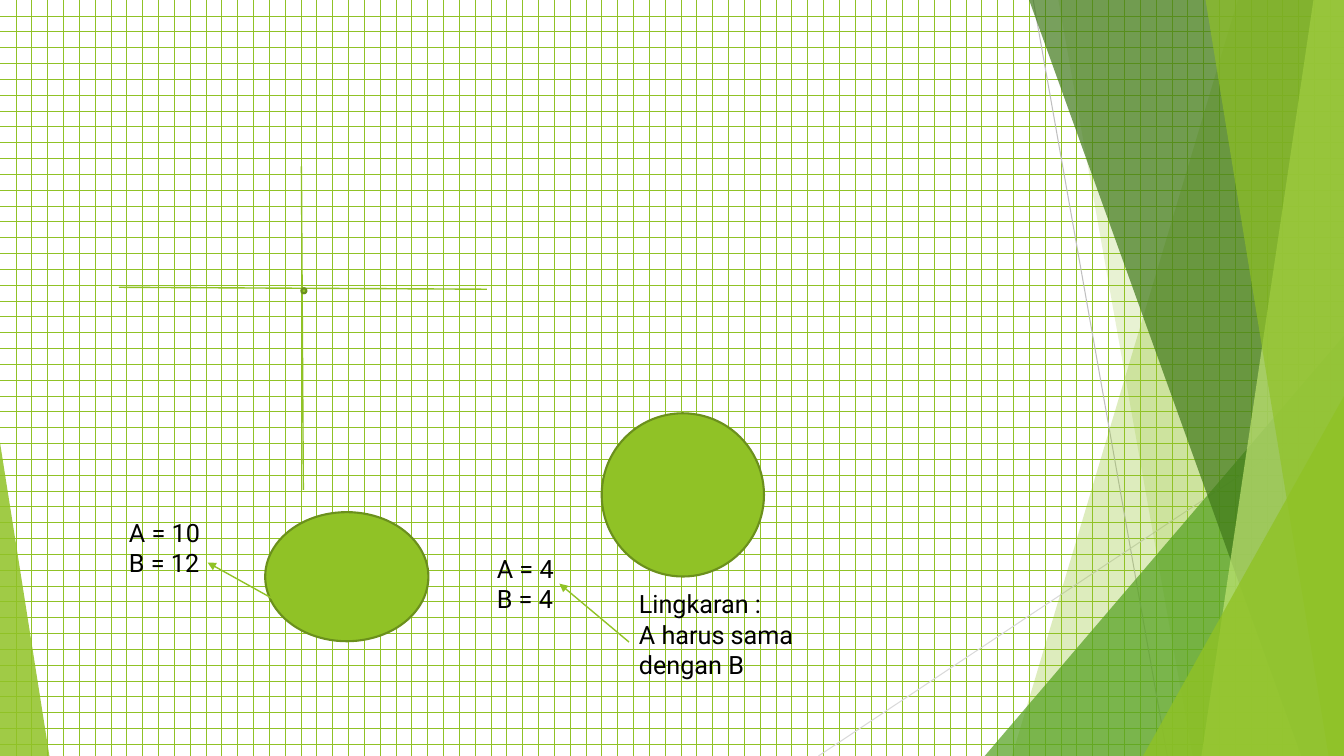
from dataclasses import dataclass

from lxml.etree import SubElement
from pptx import Presentation
from pptx.dml.color import RGBColor
from pptx.enum.dml import MSO_PATTERN
from pptx.enum.shapes import MSO_CONNECTOR, MSO_SHAPE
from pptx.enum.text import MSO_AUTO_SIZE
from pptx.oxml.ns import qn
from pptx.util import Pt

SLIDE_WIDTH, SLIDE_HEIGHT = 960, 540
COLOURS = {
    "lime": "90C226",
    "olive": "6B901C",
    "green": "54A021",
    "forest": "3F7819",
    "pale": "C0E474",
    "silver": "BFBFBF",
    "mist": "D9D9D9",
    "white": "FFFFFF",
    "black": "000000",
}
FRAME_FORMAT = {"word_wrap": True, "auto_size": MSO_AUTO_SIZE.SHAPE_TO_FIT_TEXT}
LABEL_FORMAT = {"name": "Roboto", "size": Pt(18)}


@dataclass
class Line:
    start: tuple[float, float]
    end: tuple[float, float]
    colour: str = "lime"
    width: float = 1
    arrow: bool = False


@dataclass
class Band:
    top_left: float
    bottom_left: float
    colour: str
    opacity: int


@dataclass
class Corner:
    box: tuple[float, float, float, float]
    apex: float
    colour: str
    opacity: int


@dataclass
class Round:
    box: tuple[float, float, float, float]
    preset: MSO_SHAPE = MSO_SHAPE.FLOWCHART_CONNECTOR


@dataclass
class Label:
    box: tuple[float, float, float, float]
    lines: tuple[str, ...]


FACETS = [
    Line((738, 0), (833.8, 540), "silver", 0.75),
    Line((960, 290.2), (584.6, 540), "mist", 0.75),
    Band(884.2, 722.9, "lime", 30),
    Band(756, 851.8, "lime", 20),
    Corner((703.4, 239.8, 256.6, 300.2), 1, "green", 72),
    Band(735.1, 929.5, "forest", 70),
    Band(938.2, 858.2, "pale", 70),
    Band(861.1, 949, "lime", 65),
    Corner((816.5, 283, 143.5, 257), 1, "lime", 80),
    Corner((0, 316.1, 35.3, 223.9), 0, "lime", 85),
]
AXES = [
    Line((215.3, 118.8), (216.7, 349.9)),
    Line((85, 205.2), (347.8, 206.6)),
    Round((215.3, 205.9, 3.6, 3.6)),
]
ELLIPSES = [
    Label((85, 365.8, 186.5, 51.1), ("A = 10", "B = 12")),
    Round((189.4, 365.8, 116.6, 92.2)),
    Label((347.8, 391.7, 89.3, 51.1), ("A = 4", "B = 4")),
    Label((449.3, 416.9, 134.6, 72.7), ("Lingkaran :", "A harus sama dengan B")),
    Line((449.3, 458.6), (399.6, 416.9), arrow=True),
    Line((198.7, 429.8), (148.3, 401.8), arrow=True),
    Round((429.8, 295.2, 115.9, 116.6), MSO_SHAPE.OVAL),
]


def rgb(colour: str) -> RGBColor:
    return RGBColor.from_string(COLOURS[colour])


def points(values: tuple[float, ...]) -> list[Pt]:
    return [Pt(value) for value in values]


def paint_facet(facet, colour: str, opacity: int) -> None:
    facet.shadow.inherit = False
    facet.line.fill.background()
    facet.fill.solid()
    facet.fill.fore_color.rgb = rgb(colour)
    tint = next(facet.element.spPr.iter(qn("a:srgbClr")))
    SubElement(tint, qn("a:alpha"), val=str(opacity * 1000))


def draw_line(slide, line: Line) -> None:
    connector = slide.shapes.add_connector(
        MSO_CONNECTOR.STRAIGHT, *points(line.start + line.end)
    )
    connector.line.color.rgb = rgb(line.colour)
    connector.line.width = Pt(line.width)
    if line.arrow:
        SubElement(connector.line._get_or_add_ln(), qn("a:tailEnd"), type="triangle")
    SubElement(connector.element.spPr, qn("a:effectLst"))


def draw_band(slide, band: Band) -> None:
    outline = slide.shapes.build_freeform(Pt(band.top_left), Pt(0), scale=1.0)
    corners = [
        (SLIDE_WIDTH, 0),
        (SLIDE_WIDTH, SLIDE_HEIGHT),
        (band.bottom_left, SLIDE_HEIGHT),
    ]
    outline.add_line_segments([points(corner) for corner in corners], close=True)
    paint_facet(outline.convert_to_shape(), band.colour, band.opacity)


def draw_corner(slide, corner: Corner) -> None:
    triangle = slide.shapes.add_shape(
        MSO_SHAPE.ISOSCELES_TRIANGLE, *points(corner.box)
    )
    triangle.adjustments[0] = corner.apex
    paint_facet(triangle, corner.colour, corner.opacity)


def draw_round(slide, item: Round) -> None:
    ellipse = slide.shapes.add_shape(item.preset, *points(item.box))
    ellipse.shadow.inherit = False
    ellipse.fill.solid()
    ellipse.fill.fore_color.rgb = rgb("lime")
    ellipse.line.color.rgb = rgb("olive")
    ellipse.line.width = Pt(1.5)


def draw_label(slide, label: Label) -> None:
    frame = slide.shapes.add_textbox(*points(label.box)).text_frame
    for attribute, value in FRAME_FORMAT.items():
        setattr(frame, attribute, value)
    frame.text = "\n".join(label.lines)
    for paragraph in frame.paragraphs:
        for run in paragraph.runs:
            for attribute, value in LABEL_FORMAT.items():
                setattr(run.font, attribute, value)
            run.font.color.rgb = rgb("black")


DRAWERS = {
    Line: draw_line,
    Band: draw_band,
    Corner: draw_corner,
    Round: draw_round,
    Label: draw_label,
}


def main() -> None:
    deck = Presentation()
    deck.slide_width, deck.slide_height = points((SLIDE_WIDTH, SLIDE_HEIGHT))
    slide = deck.slides.add_slide(deck.slide_layouts[6])
    grid = slide.background.fill
    grid.patterned()
    grid.pattern = MSO_PATTERN.DOTTED_GRID
    grid.fore_color.rgb = rgb("lime")
    grid.back_color.rgb = rgb("white")
    for item in FACETS + AXES + ELLIPSES:
        DRAWERS[type(item)](slide, item)
    deck.save("out.pptx")


if __name__ == "__main__":
    main()
